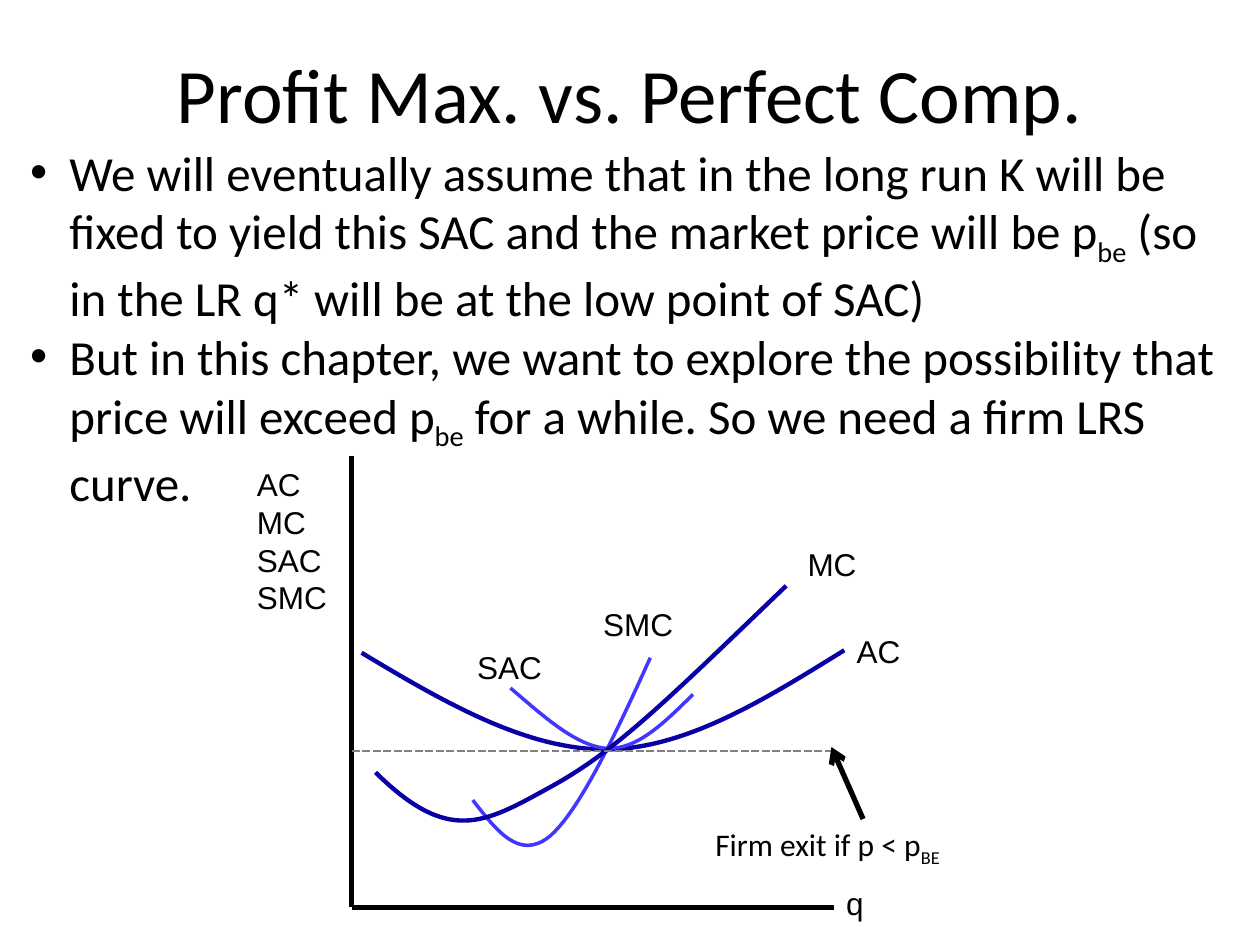
from lxml import etree
from pptx import Presentation
from pptx.dml.color import RGBColor
from pptx.enum.dml import MSO_LINE
from pptx.enum.shapes import MSO_CONNECTOR
from pptx.enum.text import MSO_ANCHOR, MSO_AUTO_SIZE, PP_ALIGN
from pptx.oxml.ns import qn
from pptx.util import Cm, Pt

STRAIGHT = MSO_CONNECTOR.STRAIGHT
SYS_DASH = MSO_LINE.SQUARE_DOT
MIDDLE = MSO_ANCHOR.MIDDLE
GROW = MSO_AUTO_SIZE.SHAPE_TO_FIT_TEXT
CENTER = PP_ALIGN.CENTER

BLACK = RGBColor(0x00, 0x00, 0x00)
GRAY = RGBColor(0x80, 0x80, 0x80)
LONG_RUN = RGBColor(0x08, 0x00, 0xA4)
SHORT_RUN = RGBColor(0x41, 0x37, 0xFF)

TITLE = "Profit Max. vs. Perfect Comp."
# Odd-numbered pieces of a paragraph are subscripts.
BULLETS = [
    ("We will eventually assume that in the long run K will be fixed to yield "
     "this SAC and the market price will be p", "be",
     " (so in the LR q* will be at the low point of SAC)"),
    ("But in this chapter, we want to explore the possibility that price will "
     "exceed p", "be", " for a while. So we need a firm LRS curve."),
]
EXIT_NOTE = ("Firm exit if p < p", "BE")

LEFT, RIGHT, TOP, BOTTOM = 7.09, 16.81, 9.19, 18.29
BREAK_EVEN = 15.14

LABELS = [
    (["AC", "MC", "SAC", "SMC"], 4.93, 9.25, 1.93, 3.33),
    (["q"], RIGHT, 17.7, 0.86, 1.02),
    (["AC"], 17.02, 12.62, 1.4, 1.02),
    (["SMC"], 11.91, 12.07, 1.93, 1.02),
    (["SAC"], 9.37, 12.93, 1.83, 1.02),
    (["MC"], 16.03, 10.87, 1.5, 1.02),
]

AC_CURVE = [(7.29, 13.16), (8.94, 14.15), (10.59, 15.11), (12.22, 15.11),
            (13.84, 15.09), (15.42, 14.1), (17.02, 13.11)]
SAC_CURVE = [(10.29, 13.87), (10.97, 14.45), (11.63, 15.06), (12.27, 15.09),
             (12.88, 15.09), (13.41, 14.55), (13.97, 14)]
SMC_CURVE = [(9.53, 16.13), (10.01, 16.74), (10.46, 17.35), (11.07, 16.87),
             (11.66, 16.38), (12.4, 14.83), (13.11, 13.26)]
MC_CURVE = [(7.57, 15.57), (9.04, 17.02), (9.75, 16.61), (11.07, 15.88),
            (12.4, 15.16), (13.39, 14.17), (15.85, 11.81)]
CURVES = [
    (AC_CURVE, LONG_RUN, 2.5),
    (SAC_CURVE, SHORT_RUN, 2),
    (SMC_CURVE, SHORT_RUN, 2),
    (MC_CURVE, LONG_RUN, 2.5),
]


def add_text(page, paragraphs, left, top, width, height, size, font="Calibri",
             wrap=False, bullet=False):
    box = page.shapes.add_textbox(Cm(left), Cm(top), Cm(width), Cm(height))
    frame = box.text_frame
    frame.word_wrap = wrap
    frame.auto_size = GROW
    for number, pieces in enumerate(paragraphs):
        para = frame.paragraphs[0] if number == 0 else frame.add_paragraph()
        if bullet:
            props = para._p.get_or_add_pPr()
            props.set("marL", str(Cm(0.79)))
            props.set("indent", str(-Cm(0.79)))
            etree.SubElement(props, qn("a:buFont")).set("typeface", "Arial")
            etree.SubElement(props, qn("a:buChar")).set("char", "•")
        para.font.name = font
        para.font.size = Pt(size)
        para.font.color.rgb = BLACK
        for position, piece in enumerate(pieces):
            span = para.add_run()
            span.text = piece
            if position % 2:
                span._r.get_or_add_rPr().set("baseline", "-25000")
    return box


def add_line(page, start, end, color=BLACK, weight=3):
    line = page.shapes.add_connector(
        STRAIGHT, *(Cm(value) for value in start + end))
    line.line.color.rgb = color
    line.line.width = Pt(weight)
    etree.SubElement(line._element.spPr, qn("a:effectLst"))
    return line


def add_curve(page, points, color, weight):
    start, *rest = [(Cm(x), Cm(y)) for x, y in points]
    builder = page.shapes.build_freeform(*start)
    builder.add_line_segments(rest, close=False)
    curve = builder.convert_to_shape()
    curve.shadow.inherit = False
    curve.fill.background()
    curve.line.color.rgb = color
    curve.line.width = Pt(weight)
    segments = list(curve._element.iter(qn("a:lnTo")))
    outline = segments[0].getparent()
    for first in range(0, len(segments), 3):
        bezier = etree.SubElement(outline, qn("a:cubicBezTo"))
        for segment in segments[first:first + 3]:
            bezier.append(segment[0])
            outline.remove(segment)


def main():
    deck = Presentation()
    deck.slide_width, deck.slide_height = Cm(25.4), Cm(19.05)
    page = deck.slides.add_slide(deck.slide_layouts[6])

    title = add_text(page, [(TITLE,)], 1.27, 0.76, 22.86, 2.21, 44, wrap=True)
    title.text_frame.auto_size = MSO_AUTO_SIZE.NONE
    title.text_frame.vertical_anchor = MIDDLE
    title.text_frame.paragraphs[0].alignment = CENTER

    add_line(page, (LEFT, TOP), (LEFT, BOTTOM))
    add_line(page, (LEFT, BOTTOM), (RIGHT, BOTTOM))
    for points, color, weight in CURVES:
        add_curve(page, points, color, weight)
    for names, *place in LABELS:
        add_text(page, [(name,) for name in names], *place, 18, font="Arial")

    price = add_line(page, (LEFT, BREAK_EVEN), (RIGHT, BREAK_EVEN), GRAY, 1.5)
    price.line.dash_style = SYS_DASH

    add_text(page, BULLETS, 0.36, 2.74, 24.89, 7.44, 28, wrap=True, bullet=True)
    add_text(page, [EXIT_NOTE], 14.17, 16.51, 5.46, 1.02, 18)
    arrow = add_line(page, (17.4, 16.51), (16.76, 15.06))
    etree.SubElement(arrow.line._get_or_add_ln(), qn("a:tailEnd")).set("type", "arrow")

    deck.save("out.pptx")


if __name__ == "__main__":
    main()
